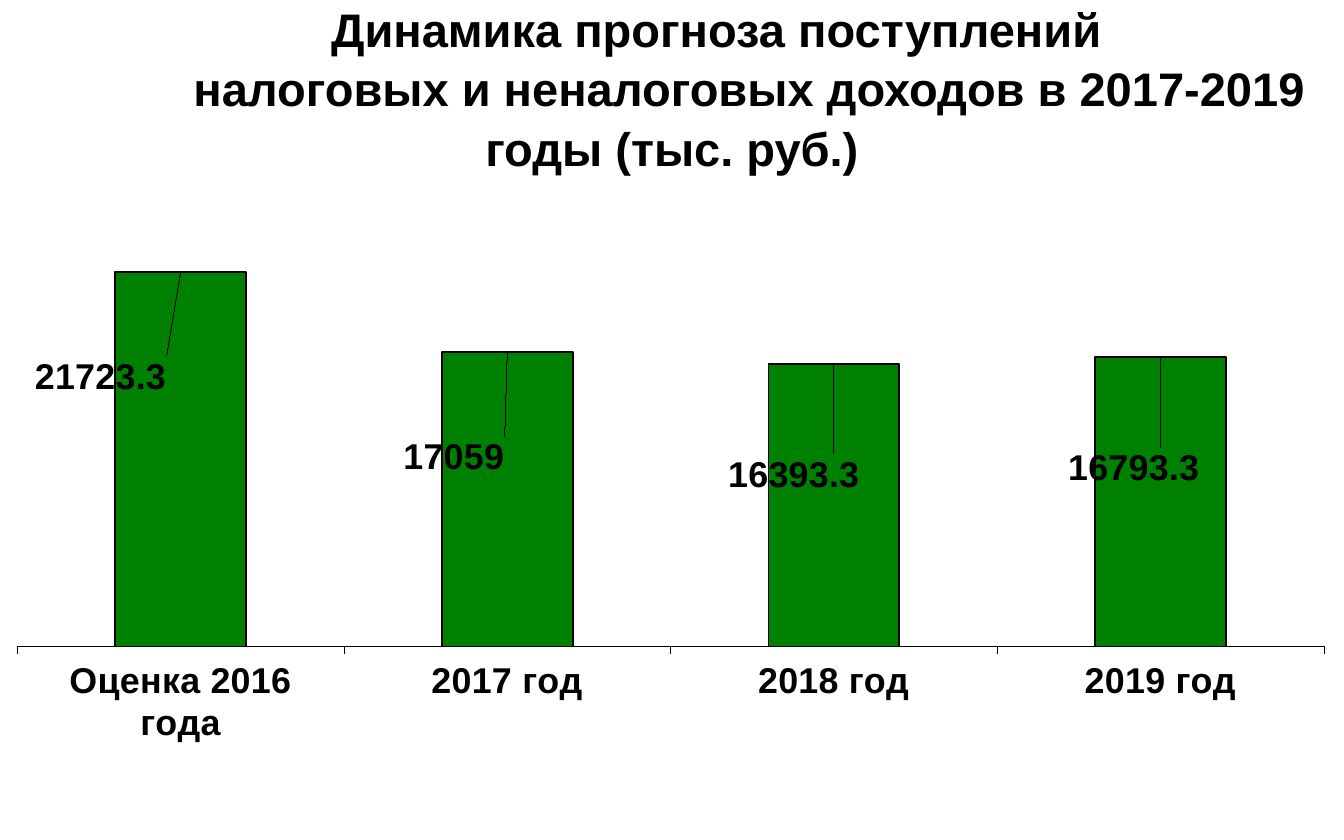
from lxml import etree
from pptx import Presentation
from pptx.chart.data import CategoryChartData
from pptx.dml.color import RGBColor
from pptx.enum.chart import XL_CHART_TYPE as ChartType
from pptx.enum.chart import XL_LABEL_POSITION as LabelPosition
from pptx.enum.chart import XL_TICK_LABEL_POSITION as TickLabels
from pptx.enum.chart import XL_TICK_MARK as TickMark
from pptx.enum.text import MSO_ANCHOR as Anchor
from pptx.enum.text import MSO_AUTO_SIZE as AutoSize
from pptx.enum.text import PP_ALIGN as Align
from pptx.oxml import parse_xml
from pptx.oxml.ns import nsdecls, qn
from pptx.util import Inches, Pt

BLACK, GREEN, GREY = "000000", "008000", "C0C0C0"

# Title lines with their first-line indents in inches
TITLE_LINES = [
    ("Динамика прогноза поступлений", 0.66),
    ("налоговых и неналоговых доходов в 2017-2019 годы (тыс. руб.)", 1.15),
]

# Year, revenue, and label shift as fractions of the chart size
REVENUES = [
    ("Оценка 2016 года", 21723.3, (-0.06, 0.21)),
    ("2017 год", 17059, (-0.04, 0.21)),
    ("2018 год", 16393.3, (-0.03, 0.22)),
    ("2019 год", 16793.3, (-0.02, 0.22)),
]


def color(hex_value):
    return RGBColor.from_string(hex_value)


def style_font(font, size):
    font.name = "Arial"
    font.size = Pt(size)
    font.bold = True
    font.color.rgb = color(BLACK)


def style_line(line, width):
    line.color.rgb = color(BLACK)
    line.width = Pt(width)


def manual_layout(**settings):
    """Return a c:layout element holding the given settings in order."""
    layout = parse_xml(f"<c:layout {nsdecls('c')}><c:manualLayout/></c:layout>")
    for name, value in settings.items():
        etree.SubElement(layout[0], qn(f"c:{name}")).set("val", str(value))
    return layout


def add_title(slide):
    title = slide.shapes.title
    title.left, title.top = Inches(0), Inches(0)
    title.width, title.height = Inches(10), Inches(1.29)
    frame = title.text_frame
    frame.word_wrap = True
    frame.auto_size = AutoSize.NONE
    frame.vertical_anchor = Anchor.MIDDLE
    frame.text = "\n".join(text for text, _ in TITLE_LINES)
    for paragraph, (_, indent) in zip(frame.paragraphs, TITLE_LINES):
        properties = paragraph._p.get_or_add_pPr()
        properties.set("marL", "0")
        properties.set("indent", str(Inches(indent)))
        paragraph.alignment = Align.CENTER
        paragraph.line_spacing = 1.05
        paragraph.space_before = Pt(0)
        style_font(paragraph.font, 25.2)


def add_value_label(point, shift):
    """Show a point's value on a grey box, moved away from its bar top."""
    label = point.data_label
    style_font(label.font, 19.2)
    label.position = LabelPosition.OUTSIDE_END
    x, y = shift
    index = label._get_or_add_dLbl().find(qn("c:idx"))
    grey_box = parse_xml(
        f"<c:spPr {nsdecls('c', 'a')}><a:solidFill>"
        f'<a:srgbClr val="{GREY}"/></a:solidFill></c:spPr>'
    )
    index.addnext(grey_box)
    index.addnext(manual_layout(x=x, y=y))


def style_axes(chart):
    years = chart.category_axis
    years.tick_label_position = TickLabels.LOW
    years.major_tick_mark = TickMark.OUTSIDE
    style_font(years.tick_labels.font, 19.2)
    style_line(years.format.line, 0.25)

    amounts = chart.value_axis
    amounts.minimum_scale, amounts.maximum_scale = 0, 25000
    amounts.has_major_gridlines = False
    amounts.visible = False


def add_revenue_chart(slide):
    years, revenues, shifts = zip(*REVENUES)
    data = CategoryChartData()
    data.categories = years
    data.add_series("Series 1", revenues)
    chart = slide.shapes.add_chart(
        ChartType.COLUMN_CLUSTERED,
        Inches(0.03), Inches(1.51), Inches(9.92), Inches(4.65), data,
    ).chart
    chart.has_title = False
    chart.has_legend = False
    style_font(chart.font, 19.2)
    style_axes(chart)

    # Plot area
    plot_area = chart._chartSpace.chart.plotArea
    for old_layout in plot_area.findall(qn("c:layout")):
        plot_area.remove(old_layout)
    plot_area.insert(0, manual_layout(
        layoutTarget="inner", xMode="edge", yMode="edge",
        x=0.01, y=0.02, w=0.98, h=0.69,
    ))

    # Bars and their labels
    plot = chart.plots[0]
    plot.gap_width = 150
    plot.vary_by_categories = False
    bars = plot.series[0]
    bars.invert_if_negative = False
    bars.format.fill.solid()
    bars.format.fill.fore_color.rgb = color(GREEN)
    style_line(bars.format.line, 0.97)
    for number, shift in enumerate(shifts):
        add_value_label(bars.points[number], shift)


def main():
    deck = Presentation()
    deck.slide_width, deck.slide_height = Inches(10), Inches(6.25)
    slide = deck.slides.add_slide(deck.slide_layouts[5])
    add_title(slide)
    add_revenue_chart(slide)
    deck.save("out.pptx")


if __name__ == "__main__":
    main()
